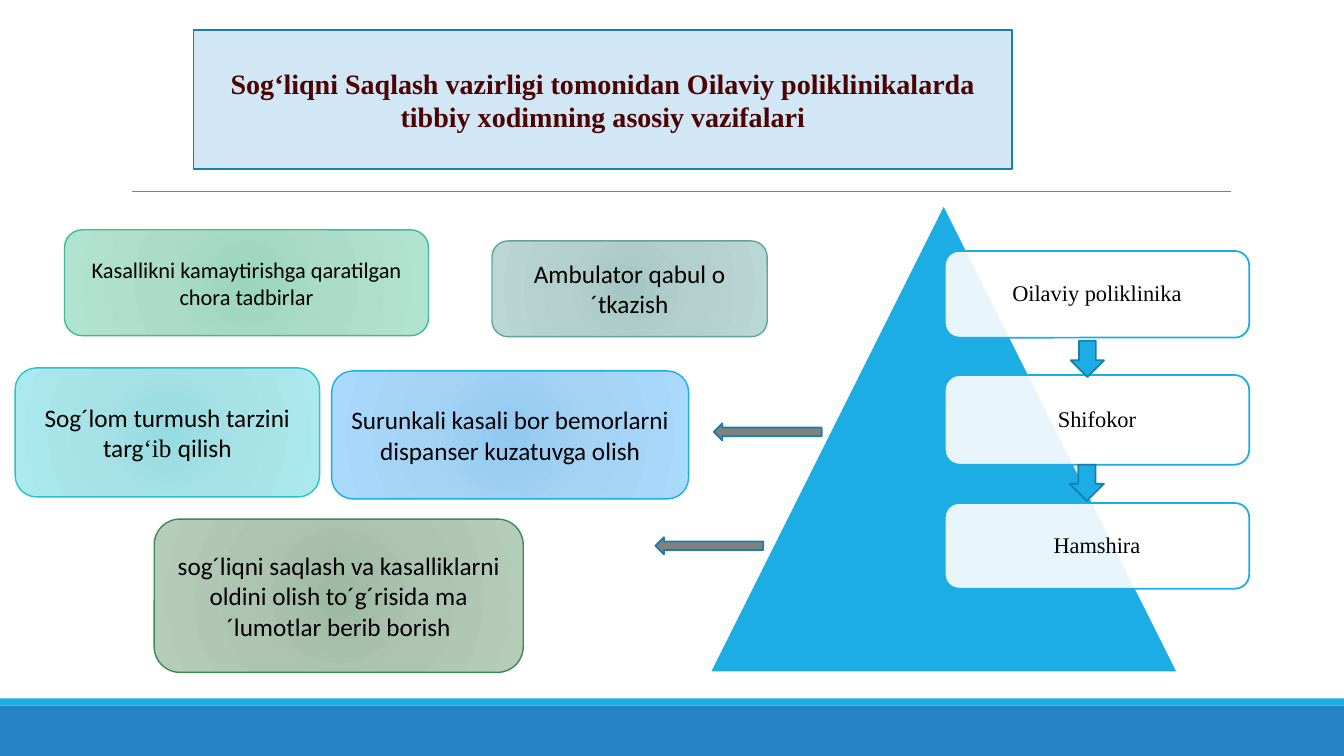
import pptx
import pptx.dml.color
import pptx.enum.shapes
import pptx.enum.text
import pptx.oxml
import pptx.oxml.ns
import pptx.util
from pptx.util import Inches

SHAPES = pptx.enum.shapes.MSO_SHAPE
BLUE, DARK_BLUE, GRAY = "1CADE4", "1580A9", "808080"
SERIF, SANS = "Times New Roman", "Calibri"

TASKS = [
    ((0.64, 2.28, 3.61, 1.05), ("9BD5BE", "ABDCC9", "B1E4D0"), "42BA97", 16,
     [("Kasallikni kamaytirishga qaratilgan chora tadbirlar", SANS)]),
    ((3.29, 3.68, 3.54, 1.27), ("92C9F0", "A4D3F5", "A9D9FD"), BLUE, 18,
     [("Surunkali kasali bor bemorlarni dispanser kuzatuvga olish", SANS)]),
    ((4.88, 2.39, 2.73, 0.95), ("A5C6C4", "B4D0CE", "BAD7D5"), "62A39F", 18,
     [("Ambulator qabul o´tkazish", SANS)]),
    ((0.15, 3.65, 3.02, 1.28), ("95DBE0", "A7E2E7", "ACE9EE"), "28C4CC", 18,
     [("Sog´lom turmush tarzini targ", SANS), ("‘ib ", SERIF), ("qilish", SANS)]),
    ((1.53, 5.15, 3.66, 1.52), ("9DBAA3", "ADC4B1", "B4CDB9"), "3E8853", 18,
     [("sog´liqni saqlash va kasalliklarni oldini olish to´g´risida "
       "ma´lumotlar berib borish", SANS)]),
]
STAFF = [
    ("Oilaviy poliklinika", 2.49, 0.86),
    ("Shifokor", 3.72, 0.89),
    ("Hamshira", 4.99, 0.85),
]
ARROWS = [
    (SHAPES.LEFT_ARROW, (6.5, 5.33, 1.07, 0.17), GRAY),
    (SHAPES.LEFT_ARROW, (7.08, 4.2, 1.07, 0.17), GRAY),
    (SHAPES.DOWN_ARROW, (10.62, 3.38, 0.33, 0.36), BLUE),
    (SHAPES.DOWN_ARROW, (10.61, 4.61, 0.34, 0.36), BLUE),
]


def color(value):
    return pptx.dml.color.RGBColor.from_string(value)


def paint(shape, fill, line=None, width=1.25):
    shape.fill.solid()
    shape.fill.fore_color.rgb = color(fill)
    if line:
        shape.line.color.rgb = color(line)
        shape.line.width = pptx.util.Pt(width)
    else:
        shape.line.fill.background()


def add_box(slide, kind, box, fill, line=None, width=1.25):
    shape = slide.shapes.add_shape(kind, *map(Inches, box))
    shape.shadow.inherit = False
    paint(shape, fill, line, width)
    return shape


def set_transparency(shape, opacity):
    tint = shape.element.spPr.find(".//" + pptx.oxml.ns.qn("a:srgbClr"))
    alpha = tint.makeelement(pptx.oxml.ns.qn("a:alpha"), {"val": str(opacity * 1000)})
    tint.append(alpha)


def set_radial_gradient(shape, colors):
    stops = "".join(
        f'<a:gs pos="{position * 1000}"><a:srgbClr val="{value}"/></a:gs>'
        for position, value in zip((0, 45, 100), colors))
    gradient = pptx.oxml.parse_xml(
        f'<a:gradFill {pptx.oxml.ns.nsdecls("a")} rotWithShape="1"><a:gsLst>{stops}</a:gsLst>'
        '<a:path path="circle"><a:fillToRect l="100000" t="100000" r="100000" b="100000"/>'
        '</a:path></a:gradFill>')
    properties = shape.element.spPr
    properties.replace(properties.find(pptx.oxml.ns.qn("a:solidFill")), gradient)


def write(shape, pieces, size, text_color="000000", bold=False):
    frame = shape.text_frame
    frame.word_wrap = True
    frame.auto_size = pptx.enum.text.MSO_AUTO_SIZE.NONE
    frame.vertical_anchor = pptx.enum.text.MSO_ANCHOR.MIDDLE
    paragraph = frame.paragraphs[0]
    paragraph.alignment = pptx.enum.text.PP_ALIGN.CENTER
    for text, font in pieces:
        run = paragraph.add_run()
        run.text = text
        run.font.name = font
        run.font.size = pptx.util.Pt(size)
        run.font.bold = bold
        run.font.color.rgb = color(text_color)
    return paragraph


def add_title(slide):
    title = slide.shapes.title
    title.left, title.top, title.width, title.height = map(Inches, (1.92, 0.3, 8.12, 1.38))
    paint(title, "D1E7F6", DARK_BLUE)
    text = ("Sog‘liqni Saqlash vazirligi tomonidan Oilaviy poliklinikalarda "
            "tibbiy xodimning asosiy vazifalari")
    write(title, [(text, SERIF)], 20, "4C0000", True)


def add_rule(slide):
    rule = slide.shapes.add_connector(
        pptx.enum.shapes.MSO_CONNECTOR.STRAIGHT,
        Inches(1.31), Inches(1.9), Inches(12.21), Inches(1.9))
    rule.line.color.rgb = color(GRAY)
    rule.line.width = pptx.util.Pt(0.5)
    properties = rule.element.spPr
    properties.append(properties.makeelement(pptx.oxml.ns.qn("a:effectLst"), {}))


def add_staff_card(slide, name, top, height):
    card = add_box(slide, SHAPES.ROUNDED_RECTANGLE, (9.37, top, 3.02, height), "FFFFFF", BLUE)
    set_transparency(card, 90)
    write(card, [(name, SERIF)], 16).line_spacing = 0.9


def add_task(slide, box, gradient, line, size, pieces):
    task = add_box(slide, SHAPES.ROUNDED_RECTANGLE, box, gradient[0], line, 1)
    set_radial_gradient(task, gradient)
    write(task, pieces, size)


def main():
    presentation = pptx.Presentation()
    presentation.slide_width = Inches(13.33)
    presentation.slide_height = Inches(7.5)
    slide = presentation.slides.add_slide(presentation.slide_layouts[5])
    add_title(slide)
    add_box(slide, SHAPES.RECTANGLE, (0, 7, 13.33, 0.5), "2683C6")
    add_box(slide, SHAPES.RECTANGLE, (0, 6.93, 13.33, 0.07), BLUE)
    add_rule(slide)
    add_box(slide, SHAPES.ISOSCELES_TRIANGLE, (7.04, 2.03, 4.64, 4.64), BLUE, "FFFFFF")
    for name, top, height in STAFF:
        add_staff_card(slide, name, top, height)
    for task in TASKS:
        add_task(slide, *task)
    for kind, box, fill in ARROWS:
        add_box(slide, kind, box, fill, DARK_BLUE)
    presentation.save("out.pptx")


if __name__ == "__main__":
    main()
